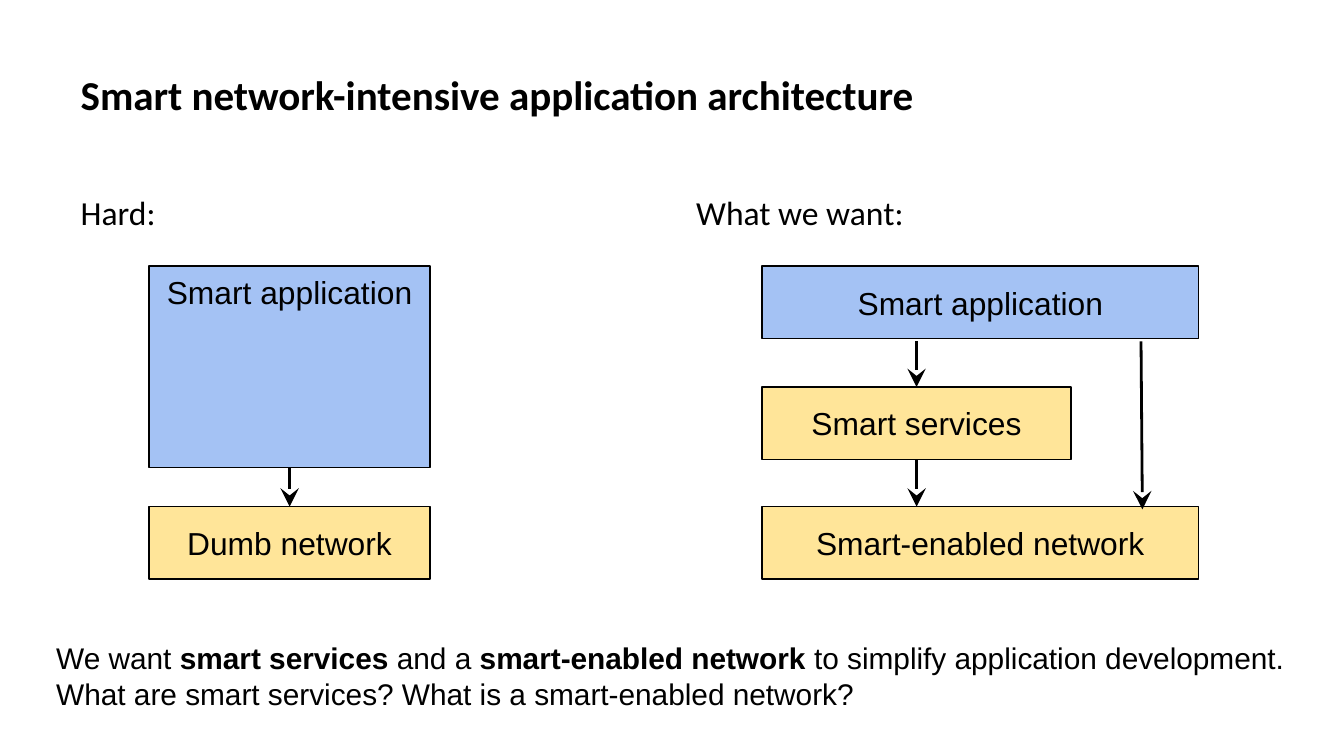
from lxml.etree import SubElement
from pptx import Presentation
from pptx.dml.color import RGBColor
from pptx.enum.shapes import MSO_CONNECTOR, MSO_SHAPE
from pptx.enum.text import MSO_ANCHOR, MSO_AUTO_SIZE, PP_ALIGN
from pptx.oxml.ns import qn
from pptx.util import Inches, Pt

COLORS = {"ink": "000000", "application": "A4C2F4", "network": "FFE599"}
TOP, BOTTOM = 0, 2


class ArchitectureSlide:
    """Holds the style and the current slide, with a method per kind of element."""

    def __init__(self, slide, font="Arial", inset=0.1):
        self.slide = slide
        self.font = font
        self.inset = Inches(inset)

    def color(self, name):
        return RGBColor.from_string(COLORS[name])

    def frame(self, shape, anchor):
        frame = shape.text_frame
        frame.word_wrap = True
        frame.auto_size = MSO_AUTO_SIZE.NONE
        frame.vertical_anchor = anchor
        frame.margin_left = frame.margin_right = self.inset
        frame.margin_top = frame.margin_bottom = self.inset
        return frame

    def style(self, paragraph, size, font=None, bold=None, align=PP_ALIGN.LEFT):
        paragraph.alignment = align
        paragraph.font.name = font or self.font
        paragraph.font.size = Pt(size)
        paragraph.font.bold = bold
        paragraph.font.color.rgb = self.color("ink")

    def heading(self, index, text, left, top, width, height, size,
                bold=None, anchor=MSO_ANCHOR.TOP):
        holder = self.slide.placeholders[index]
        holder.left, holder.top = Inches(left), Inches(top)
        holder.width, holder.height = Inches(width), Inches(height)
        paragraph = self.frame(holder, anchor).paragraphs[0]
        paragraph.text = text
        paragraph.line_spacing = 1.02
        paragraph.space_before = Pt(0)
        self.style(paragraph, size, "Calibri", bold)
        properties = paragraph._p.get_or_add_pPr()
        properties.set("marL", "0")
        properties.set("indent", "0")
        properties.insert_element_before(
            properties.makeelement(qn("a:buNone")), "a:tabLst", "a:defRPr", "a:extLst")

    def box(self, text, fill, left, top, width, height=0.54, anchor=MSO_ANCHOR.MIDDLE):
        box = self.slide.shapes.add_shape(
            MSO_SHAPE.RECTANGLE, Inches(left), Inches(top), Inches(width), Inches(height))
        box.shadow.inherit = False
        box.fill.solid()
        box.fill.fore_color.rgb = self.color(fill)
        box.line.color.rgb = self.color("ink")
        box.line.width = Pt(0.75)
        paragraph = self.frame(box, anchor).paragraphs[0]
        paragraph.text = text
        self.style(paragraph, 17, align=PP_ALIGN.CENTER)
        return box

    def arrow(self, start, end, source=None, target=None):
        arrow = self.slide.shapes.add_connector(
            MSO_CONNECTOR.STRAIGHT, *(Inches(value) for value in start + end))
        if source is not None:
            arrow.begin_connect(source, BOTTOM)
        if target is not None:
            arrow.end_connect(target, TOP)
        arrow.line.color.rgb = self.color("ink")
        arrow.line.width = Pt(1.5)
        SubElement(arrow.line._get_or_add_ln(), qn("a:tailEnd"),
                   type="stealth", w="lg", len="lg")
        SubElement(arrow._element.spPr, qn("a:effectLst"))

    def note(self, lines, left, top, width, height):
        note = self.slide.shapes.add_textbox(
            Inches(left), Inches(top), Inches(width), Inches(height))
        frame = self.frame(note, MSO_ANCHOR.TOP)
        for number, line in enumerate(lines):
            paragraph = frame.add_paragraph() if number else frame.paragraphs[0]
            self.style(paragraph, 16)
            for text, bold in line:
                run = paragraph.add_run()
                run.text = text
                run.font.bold = bold


def main():
    deck = Presentation()
    deck.slide_width = Inches(10)
    deck.slide_height = deck.slide_width * 9 // 16
    page = ArchitectureSlide(deck.slides.add_slide(deck.slide_layouts[3]))

    page.heading(0, "Smart network-intensive application architecture",
                 0.5, 0.23, 9, 0.94, 22, True, MSO_ANCHOR.MIDDLE)
    page.heading(1, "Hard:", 0.5, 1.32, 4.42, 0.67, 18)
    page.heading(2, "What we want:", 5.08, 1.32, 4.42, 0.8, 18)

    application_top, services_top, network_top = 1.98, 2.88, 3.77
    hard_left, hard_width = 1.11, 2.09
    hard_application = page.box("Smart application", "application", hard_left,
                                application_top, hard_width, 1.5, MSO_ANCHOR.TOP)
    hard_application.text_frame.margin_top = Inches(0.05)
    dumb_network = page.box("Dumb network", "network", hard_left, network_top, hard_width)

    wanted_left, wanted_width = 5.67, 3.25
    page.box("Smart application", "application", wanted_left, application_top, wanted_width)
    page.box("Smart-enabled network", "network", wanted_left, network_top, wanted_width)
    services = page.box("Smart services", "network", wanted_left, services_top, 2.3)

    page.arrow((2.16, 3.48), (2.16, network_top), hard_application, dumb_network)
    page.arrow((6.82, 2.54), (6.82, services_top), target=services)
    page.arrow((6.82, 3.42), (6.82, network_top), source=services)
    page.arrow((8.49, 2.54), (8.5, 3.79))

    page.note([
        [("We want ", False), ("smart services", True), (" and a ", False),
         ("smart-enabled network", True), (" to simplify application development.", False)],
        [("What are smart services? What is a smart-enabled network?", False)],
    ], 0.32, 4.66, 9.55, 0.97)

    deck.save("out.pptx")


if __name__ == "__main__":
    main()
